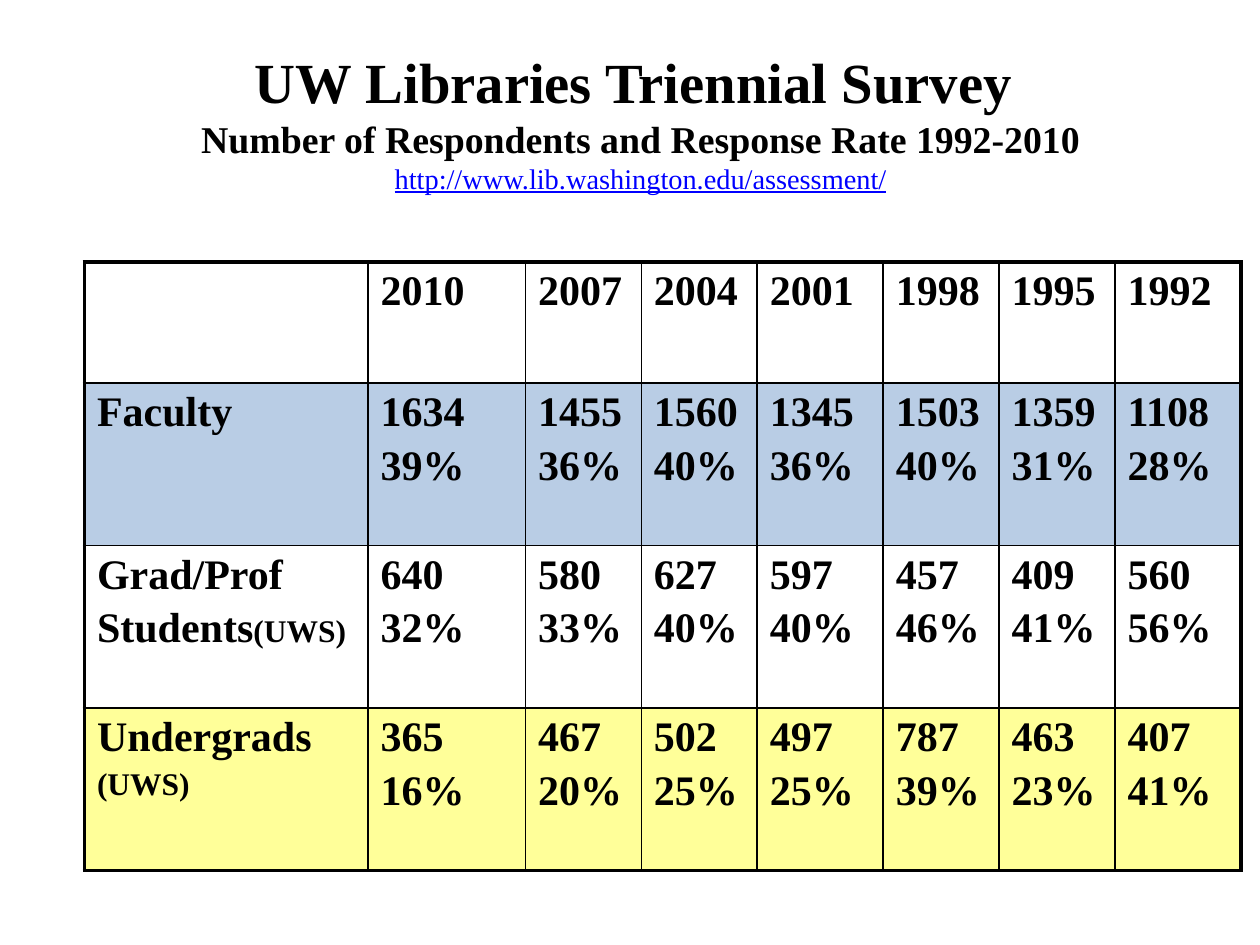
from pptx import Presentation
from pptx.dml.color import RGBColor
from pptx.enum.text import MSO_ANCHOR as Anchor, PP_ALIGN as Align
from pptx.oxml.ns import qn
from pptx.util import Inches, Pt
from lxml.etree import SubElement

COLORS = {"ink": "000000", "link": "0000FF", "plain": "FFFFFF",
          "blue": "B9CDE5", "yellow": "FFFF99"}
TITLE = [
    ("UW Libraries Triennial Survey ", {"size": 32.4}),
    ("Number of Respondents and Response Rate 1992-2010", {"size": 21.6}),
    ("http://www.lib.washington.edu/assessment/",
     {"size": 16.2, "color": "link", "bold": False, "underline": True}),
]
SMALL = {"size": 18}
YEARS = ["2010", "2007", "2004", "2001", "1998", "1995", "1992"]
GROUPS = [
    ([[("Faculty", {})]], "blue",
     [1634, 1455, 1560, 1345, 1503, 1359, 1108], [39, 36, 40, 36, 40, 31, 28]),
    ([[("Grad/Prof", {})], [("Students", {}), ("(UWS)", SMALL)]], "plain",
     [640, 580, 627, 597, 457, 409, 560], [32, 33, 40, 40, 46, 41, 56]),
    ([[("Undergrads", {})], [("(UWS)", SMALL)]], "yellow",
     [365, 467, 502, 497, 787, 463, 407], [16, 20, 25, 25, 39, 23, 41]),
]
COLUMN_WIDTHS = [2.25, 1.25, 0.92, 0.92, 1, 0.92, 0.92, 1]
ROW_HEIGHTS = [0.96, 1.29, 1.29, 1.29]


class SurveySlide:
    style = {"name": "Times New Roman", "size": 24, "bold": True, "color": "ink"}
    inner_line, outer_line = 1, 2.25

    def __init__(self, deck):
        self.page = deck.slides.add_slide(deck.slide_layouts[6])

    def add_text(self, frame, lines, **para_format):
        for index, spans in enumerate(lines):
            para = frame.add_paragraph() if index else frame.paragraphs[0]
            for name, value in para_format.items():
                setattr(para, name, value)
            for text, changes in spans:
                span = para.add_run()
                span.text = text
                values = {**self.style, **changes}
                color = values.pop("color")
                values["size"] = Pt(values["size"])
                for name, value in values.items():
                    setattr(span.font, name, value)
                span.font.color.rgb = RGBColor.from_string(COLORS[color])

    def add_title(self, lines, left, top, width, height):
        box = self.page.shapes.add_textbox(*map(Inches, (left, top, width, height)))
        frame = box.text_frame
        frame.word_wrap = True
        frame.vertical_anchor = Anchor.MIDDLE
        self.add_text(frame, [[line] for line in lines], alignment=Align.CENTER)

    def add_border(self, cell, sides):
        properties = cell._tc.get_or_add_tcPr()
        for side, outer in sides.items():
            width = self.outer_line if outer else self.inner_line
            line = SubElement(properties, qn(f"a:ln{side}"), w=str(Pt(width)))
            fill = SubElement(line, qn("a:solidFill"))
            SubElement(fill, qn("a:srgbClr"), val=COLORS["ink"])

    def add_grid(self, rows, fills, left, top):
        size = sum(COLUMN_WIDTHS), sum(ROW_HEIGHTS)
        grid = self.page.shapes.add_table(
            len(rows), len(rows[0]), *map(Inches, (left, top, *size))).table
        grid.first_row = grid.horz_banding = False
        for column, width in zip(grid.columns, COLUMN_WIDTHS):
            column.width = Inches(width)
        for row, height in zip(grid.rows, ROW_HEIGHTS):
            row.height = Inches(height)
        last_row, last_column = len(rows) - 1, len(rows[0]) - 1
        for r, (row, fill) in enumerate(zip(rows, fills)):
            for c, lines in enumerate(row):
                cell = grid.cell(r, c)
                self.add_text(cell.text_frame, lines, space_before=Pt(4))
                self.add_border(cell, {"L": c == 0, "R": c == last_column,
                                       "T": r == 0, "B": r == last_row})
                cell.fill.solid()
                cell.fill.fore_color.rgb = RGBColor.from_string(COLORS[fill])


def main():
    deck = Presentation()
    deck.slide_width, deck.slide_height = Inches(10), Inches(7.5)
    slide = SurveySlide(deck)
    slide.add_title(TITLE, 0.17, 0.17, 9.83, 1.58)
    rows = [[[]] + [[[(year, {})]] for year in YEARS]]
    for label, _, counts, rates in GROUPS:
        rows.append([label] + [[[(str(count), {})], [(f"{rate}%", {})]]
                               for count, rate in zip(counts, rates)])
    fills = ["plain"] + [group[1] for group in GROUPS]
    slide.add_grid(rows, fills, 0.67, 2.08)
    deck.save("out.pptx")


if __name__ == "__main__":
    main()
